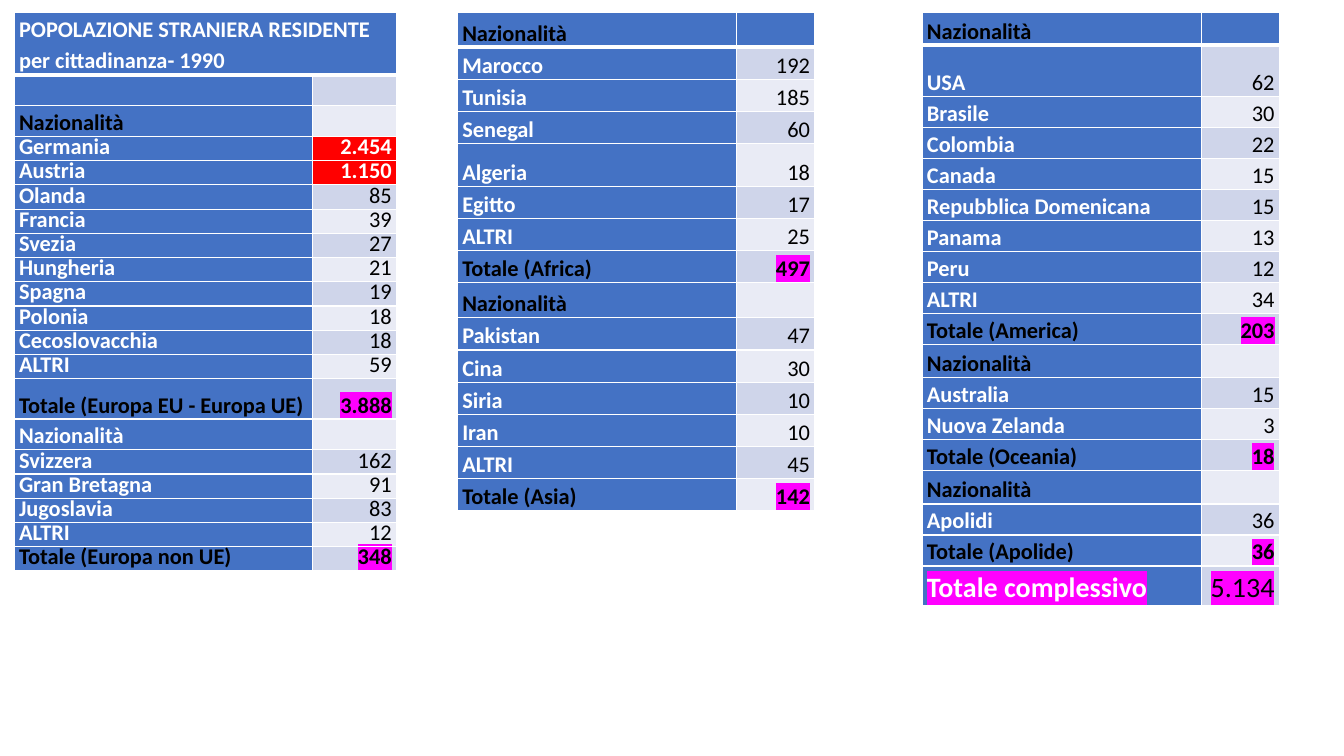
"""Build a slide with three tables of resident foreign population by nationality in 1990."""
from dataclasses import dataclass, field

from lxml import etree
from pptx import Presentation
from pptx import util as u
from pptx.dml.color import RGBColor
from pptx.enum import text
from pptx.oxml import ns


@dataclass(frozen=True)
class Theme:
    """Colours, font and type sizes of the slide."""
    blue: str = "4472C4"
    dark_band: str = "CFD5EA"
    light_band: str = "E9EBF5"
    white: str = "FFFFFF"
    black: str = "000000"
    red: str = "FF0000"
    magenta: str = "FF00FF"
    font: str = "Calibri"
    body: int = 16
    grand: int = 20


THEME = Theme()


@dataclass(frozen=True)
class Look:
    """Format of one kind of row."""
    label_colour: str = THEME.white
    value_colour: str = THEME.black
    value_bold: bool = False
    value_fill: str | None = None
    label_mark: str | None = None
    value_mark: str | None = None
    size: int = THEME.body
    spacing: float | u.Pt = u.Pt(12)


COUNTRY = Look()
HEADING = Look(label_colour=THEME.black)
TOP = Look(label_colour=THEME.black, value_fill=THEME.blue)
TITLE = Look(spacing=1.15)
LEADER = Look(value_colour=THEME.white, value_bold=True, value_fill=THEME.red)
TOTAL = Look(label_colour=THEME.black, value_bold=True, value_mark=THEME.magenta)
GRAND = Look(label_mark=THEME.magenta, value_mark=THEME.magenta,
             size=THEME.grand, spacing=1.15)


@dataclass(frozen=True)
class Row:
    """One nationality, heading or total; height in centimetres if special."""
    label: str
    value: str = ""
    look: Look = COUNTRY
    height: float | None = None


@dataclass(frozen=True)
class Block:
    """One table; lengths in centimetres."""
    left: float
    widths: tuple[float, float]
    row_height: float
    rows: list[Row] = field(default_factory=list)
    top: float = 0.3


BLOCKS = [
    Block(0.36, (7.52, 2.11), 0.61, [
        Row("POPOLAZIONE STRANIERA RESIDENTE per cittadinanza- 1990", "", TITLE, 1.52),
        Row(""),
        Row("Nazionalità", "", HEADING, 0.66),
        Row("Germania", "2.454", LEADER),
        Row("Austria", "1.150", LEADER),
        Row("Olanda", "85"),
        Row("Francia", "39"),
        Row("Svezia", "27"),
        Row("Hungheria", "21"),
        Row("Spagna", "19"),
        Row("Polonia", "18"),
        Row("Cecoslovacchia", "18"),
        Row("ALTRI", "59"),
        Row("Totale (Europa EU - Europa UE)", "3.888", TOTAL, 1.02),
        Row("Nazionalità", "", COUNTRY, 0.66),
        Row("Svizzera", "162"),
        Row("Gran Bretagna", "91"),
        Row("Jugoslavia", "83"),
        Row("ALTRI", "12"),
        Row("Totale (Europa non UE)", "348", TOTAL),
    ]),
    Block(11.53, (7.04, 1.96), 0.81, [
        Row("Nazionalità", "", TOP, 0.89),
        Row("Marocco", "192"),
        Row("Tunisia", "185"),
        Row("Senegal", "60"),
        Row("Algeria", "18", COUNTRY, 1.07),
        Row("Egitto", "17"),
        Row("ALTRI", "25"),
        Row("Totale (Africa)", "497", TOTAL),
        Row("Nazionalità", "", HEADING, 0.89),
        Row("Pakistan", "47"),
        Row("Cina", "30"),
        Row("Siria", "10"),
        Row("Iran", "10"),
        Row("ALTRI", "45"),
        Row("Totale (Asia)", "142", TOTAL),
    ]),
    Block(23.24, (7.04, 1.96), 0.78, [
        Row("Nazionalità", "", TOP, 0.84),
        Row("USA", "62", COUNTRY, 1.3),
        Row("Brasile", "30"),
        Row("Colombia", "22"),
        Row("Canada", "15"),
        Row("Repubblica Domenicana", "15"),
        Row("Panama", "13"),
        Row("Peru", "12"),
        Row("ALTRI", "34"),
        Row("Totale (America)", "203", TOTAL),
        Row("Nazionalità", "", HEADING, 0.84),
        Row("Australia", "15"),
        Row("Nuova Zelanda", "3"),
        Row("Totale (Oceania)", "18", TOTAL),
        Row("Nazionalità", "", HEADING, 0.84),
        Row("Apolidi", "36"),
        Row("Totale (Apolide)", "36", TOTAL),
        Row("Totale complessivo", "5.134", GRAND, 0.99),
    ]),
]


def apply(target, values: dict) -> None:
    """Set each named attribute on the target."""
    for name, value in values.items():
        setattr(target, name, value)


def add_colour(parent, tag: str, colour: str):
    """Append a colour element of the given tag and return it."""
    holder = etree.SubElement(parent, ns.qn(tag))
    etree.SubElement(holder, ns.qn("a:srgbClr"), val=colour)
    return holder


def draw_borders(cell, row_index: int) -> None:
    """Give the cell white borders, thicker below the top row."""
    properties = cell._tc.get_or_add_tcPr()
    points = {"L": 1, "R": 1, "T": 3 if row_index == 1 else 1, "B": 3 if row_index == 0 else 1}
    for place, (side, width) in enumerate(points.items()):
        line = etree.Element(ns.qn(f"a:ln{side}"), w=str(u.Pt(width)))
        add_colour(line, "a:solidFill", THEME.white)
        properties.insert(place, line)


def fill_cell(cell, words: str, fill: str, look: Look, colour: str, bold: bool,
              mark: str | None, align) -> None:
    """Write and format one cell."""
    apply(cell, {"margin_left": u.Cm(0.12), "margin_right": u.Cm(0.12),
                 "margin_top": 0, "margin_bottom": 0,
                 "vertical_anchor": text.MSO_ANCHOR.BOTTOM})
    cell.fill.solid()
    cell.fill.fore_color.rgb = RGBColor.from_string(fill)
    para = cell.text_frame.paragraphs[0]
    apply(para, {"alignment": align, "line_spacing": look.spacing, "space_after": u.Pt(8)})
    if not words:
        return
    span = para.add_run()
    span.text = words
    apply(span.font, {"name": THEME.font, "size": u.Pt(look.size), "bold": bold})
    span.font.color.rgb = RGBColor.from_string(colour)
    if mark:
        properties = span.font._element
        properties.find(ns.qn("a:solidFill")).addnext(
            add_colour(properties, "a:highlight", mark))


def draw_block(page, block: Block) -> None:
    """Draw one table of nationalities."""
    heights = [row.height or block.row_height for row in block.rows]
    table = page.shapes.add_table(
        len(block.rows), 2, u.Cm(block.left), u.Cm(block.top),
        u.Cm(sum(block.widths)), u.Cm(sum(heights))).table
    apply(table, {"first_row": False, "horz_banding": False})
    for column, width in zip(table.columns, block.widths):
        column.width = u.Cm(width)
    for index, (row, height) in enumerate(zip(block.rows, heights)):
        table.rows[index].height = u.Cm(height)
        look = row.look
        band = THEME.dark_band if index % 2 else THEME.light_band
        label, value = table.cell(index, 0), table.cell(index, 1)
        fill_cell(label, row.label, THEME.blue, look, look.label_colour, True,
                  look.label_mark, text.PP_ALIGN.LEFT)
        fill_cell(value, row.value, look.value_fill or band, look, look.value_colour,
                  look.value_bold, look.value_mark, text.PP_ALIGN.RIGHT)
        for cell in (label, value):
            draw_borders(cell, index)
        if look is TITLE:
            label.merge(value)


def main() -> None:
    """Build and save the deck."""
    deck = Presentation()
    apply(deck, {"slide_width": u.Cm(33.87), "slide_height": u.Cm(19.05)})
    page = deck.slides.add_slide(deck.slide_layouts[6])
    for block in BLOCKS:
        draw_block(page, block)
    deck.save("out.pptx")


if __name__ == "__main__":
    main()
